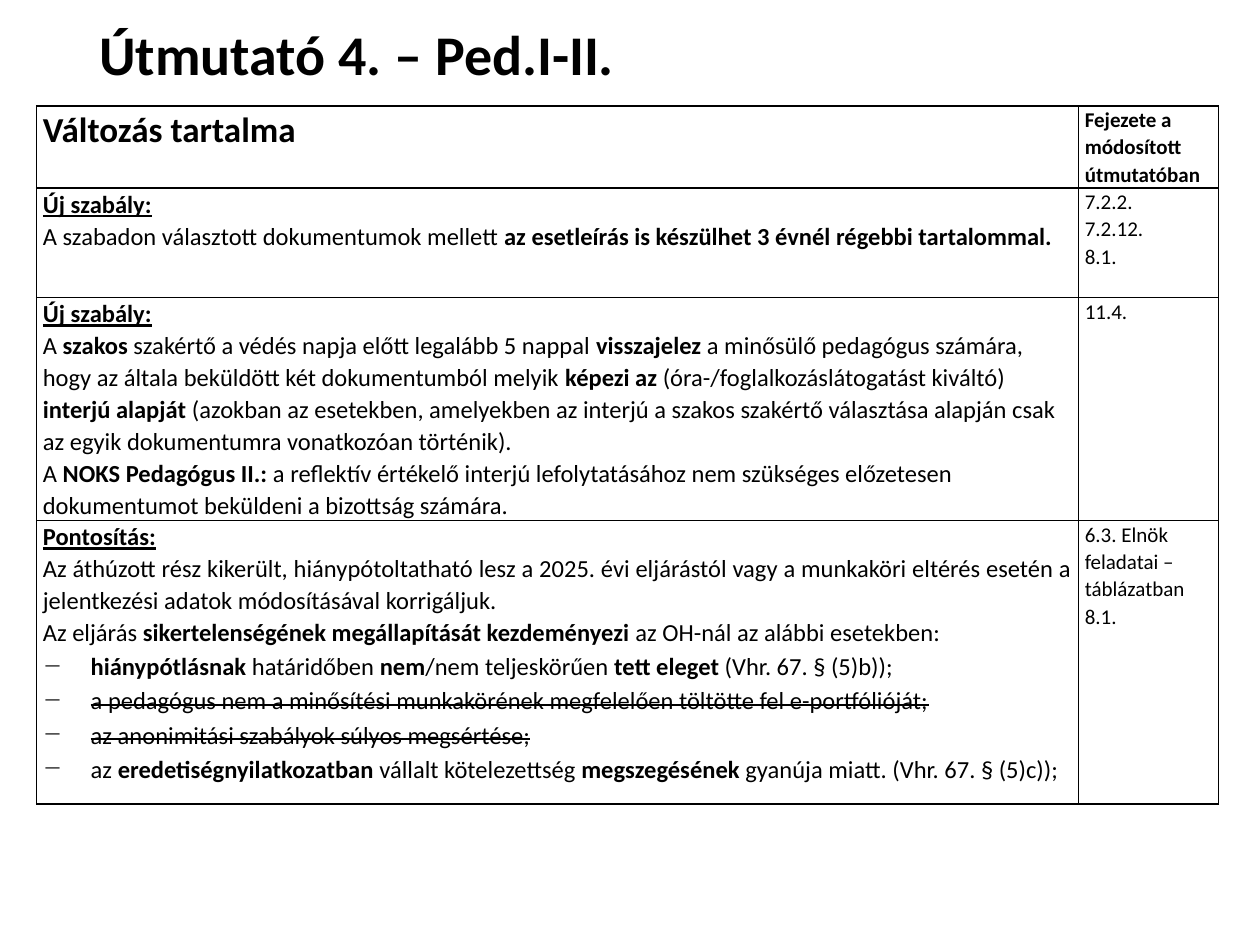
import pptx
import pptx.util
import pptx.dml.color
import pptx.enum.text
import pptx.oxml
import pptx.oxml.ns

ALIGN = pptx.enum.text.PP_ALIGN
ANCHOR = pptx.enum.text.MSO_ANCHOR
BLACK = "000000"

deck = pptx.Presentation()
deck.slide_width = pptx.util.Inches(10)
deck.slide_height = pptx.util.Inches(7.5)
across = deck.slide_width / 100  # one percent of the slide's width
down = deck.slide_height / 100   # one percent of the slide's height
slide = deck.slides.add_slide(deck.slide_layouts[6])


def color(hex_code):
    return pptx.dml.color.RGBColor.from_string(hex_code)


def write(paragraph, marked, size, align=ALIGN.LEFT, spacing=1.07):
    """Text between asterisks is bold; a leading _ underlines, ~ strikes out."""
    paragraph.alignment = align
    paragraph.line_spacing = spacing
    for i, part in enumerate(marked.lstrip("_~").split("*")):
        if not part:
            continue
        run = paragraph.add_run()
        run.text = part
        look = {"name": "Calibri", "size": pptx.util.Pt(size), "bold": i % 2 == 1,
                "underline": marked.startswith("_")}
        for attribute, value in look.items():
            setattr(run.font, attribute, value)
        run.font.color.rgb = color(BLACK)
        if marked.startswith("~"):
            run.font._element.set("strike", "sngStrike")


# Title
title = slide.shapes.add_textbox(int(6.9 * across), int(1.87 * down),
                                 int(86.2 * across), int(8.4 * down)).text_frame
title.word_wrap = True
title.vertical_anchor = ANCHOR.MIDDLE
write(title.paragraphs[0], "*Útmutató 4. – Ped.I-II.*", 32, spacing=0.9)

# Rows: height in percent, change text, its size, its alignment, chapters
rows = [
    (8.67, ["*Változás tartalma*"], 20, ALIGN.LEFT,
     ["*Fejezete a módosított útmutatóban*"]),
    (11.6, ["_*Új szabály:*",
            "A szabadon választott dokumentumok mellett "
            "*az esetleírás is készülhet 3 évnél régebbi tartalommal.*"],
     14, ALIGN.LEFT, ["7.2.2.", "7.2.12.", "8.1."]),
    (23.6, ["_*Új szabály:*",
            "A *szakos* szakértő a védés napja előtt legalább 5 nappal *visszajelez* "
            "a minősülő pedagógus számára, hogy az általa beküldött két dokumentumból "
            "melyik *képezi az *(óra-/foglalkozáslátogatást kiváltó) *interjú alapját *"
            "(azokban az esetekben, amelyekben az interjú a szakos szakértő választása "
            "alapján csak az egyik dokumentumra vonatkozóan történik).",
            "A *NOKS Pedagógus II.:* a reflektív értékelő interjú lefolytatásához nem "
            "szükséges előzetesen dokumentumot beküldeni a bizottság számára."],
     14, ALIGN.LEFT, ["11.4."]),
    (30, ["_*Pontosítás:*",
          "Az áthúzott rész kikerült, hiánypótoltatható lesz a 2025. évi eljárástól vagy "
          "a munkaköri eltérés esetén a jelentkezési adatok módosításával korrigáljuk.",
          "Az eljárás *sikertelenségének megállapítását kezdeményezi *"
          "az OH-nál az alábbi esetekben:"],
     14, ALIGN.JUSTIFY, ["6.3. Elnök feladatai – táblázatban", "8.1."]),
]
failure_cases = [
    "*hiánypótlásnak* határidőben *nem*/nem teljeskörűen *tett eleget *(Vhr. 67. § (5)b));",
    "~a pedagógus nem a minősítési munkakörének megfelelően töltötte fel e-portfólióját;",
    "~az anonimitási szabályok súlyos megsértése;",
    "az *eredetiségnyilatkozatban* vállalt kötelezettség *megszegésének* gyanúja miatt. "
    "(Vhr. 67. § (5)c));",
]

# Table of changes
column_shares = [82.7, 11.1]
changes = slide.shapes.add_table(
    len(rows), 2, int(2.9 * across), int(11.2 * down),
    int(sum(column_shares) * across), int(sum(row[0] for row in rows) * down)).table
changes.first_row = False
changes.horz_banding = False
for column, share in zip(changes.columns, column_shares):
    column.width = int(share * across)

for r, (height, change, size, align, chapters) in enumerate(rows):
    changes.rows[r].height = int(height * down)
    for c, (lines, points, side) in enumerate([(change, size, align),
                                               (chapters, 12, ALIGN.LEFT)]):
        cell = changes.cell(r, c)
        layout = {"margin_left": pptx.util.Inches(0.05), "margin_top": 0,
                  "margin_right": pptx.util.Inches(0.05), "margin_bottom": 0,
                  "vertical_anchor": ANCHOR.TOP}
        for attribute, value in layout.items():
            setattr(cell, attribute, value)
        cell.fill.background()
        for i, edge in enumerate(["lnL", "lnR", "lnT", "lnB"]):
            cell._tc.tcPr.insert(i, pptx.oxml.parse_xml(
                f'<a:{edge} {pptx.oxml.ns.nsdecls("a")} w="12700"><a:solidFill>'
                f'<a:srgbClr val="{BLACK}"/></a:solidFill></a:{edge}>'))
        for i, line in enumerate(lines):
            frame = cell.text_frame
            write(frame.add_paragraph() if i else frame.paragraphs[0], line, points, side)

# Dashed list at the end of the last row
indent = pptx.util.Inches(0.38)
for case in failure_cases:
    item = changes.cell(3, 0).text_frame.add_paragraph()
    properties = item._p.get_or_add_pPr()
    properties.set("marL", str(indent))
    properties.set("indent", str(-indent))
    properties.append(pptx.oxml.parse_xml(
        f'<a:buChar {pptx.oxml.ns.nsdecls("a")} char="−"/>'))
    write(item, case, 14, ALIGN.JUSTIFY, 1.15)

deck.save("out.pptx")
